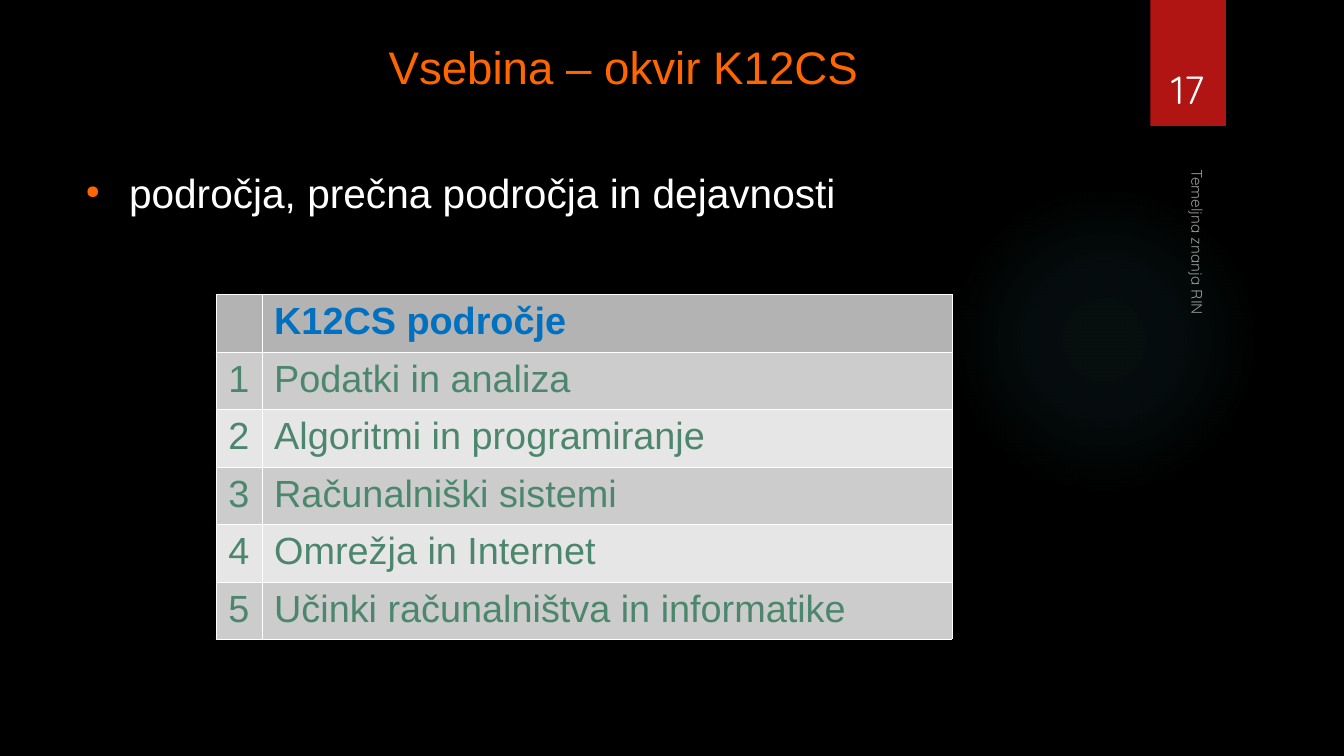
from pptx import Presentation
from pptx.dml.color import RGBColor
from pptx.enum.shapes import MSO_SHAPE
from pptx.enum.text import MSO_ANCHOR, PP_ALIGN
from pptx.oxml import parse_xml
from pptx.oxml.ns import nsdecls, qn
from pptx.util import Inches, Pt

LEFT, CENTER = PP_ALIGN.LEFT, PP_ALIGN.CENTER
TOP, MIDDLE, BOTTOM = MSO_ANCHOR.TOP, MSO_ANCHOR.MIDDLE, MSO_ANCHOR.BOTTOM
OVAL, RECTANGLE = MSO_SHAPE.OVAL, MSO_SHAPE.RECTANGLE

# Content
TITLE = "Vsebina – okvir K12CS"
BULLET = "področja, prečna področja in dejavnosti"
FOOTER = "Temeljna znanja RIN"
PAGE_NUMBER = "17"
TABLE_HEADER = "K12CS področje"
AREAS = [
    "Podatki in analiza",
    "Algoritmi in programiranje",
    "Računalniški sistemi",
    "Omrežja in Internet",
    "Učinki računalništva in informatike",
]

# Style
ORANGE, WHITE, RED, BLUE, GREEN = "FF6600", "FFFFFF", "B01513", "0070C0", "4B866D"
HEADER_FILL, BAND_FILLS = "B3B3B3", ["CCCCCC", "E6E6E6"]
GLOW_COLOR, GLOW_STOPS = "50B9C1", [(0, 7), (36, 6), (69, 0)]
COLUMN_WIDTHS, TABLE_HEIGHT = [0.46, 6.84], 3.39


def color(value):
    return RGBColor.from_string(value)


def write(frame, text, size, fill, font="Arial", align=LEFT, bold=False):
    para = frame.paragraphs[0]
    para.alignment = align
    span = para.add_run()
    span.text = text
    span.font.name, span.font.size, span.font.bold = font, Pt(size), bold
    span.font.color.rgb = color(fill)
    return para


def add_text(page, place, text, size, fill, anchor=TOP, inset=(0, 0), rotation=0, **style):
    box = page.shapes.add_textbox(*map(Inches, place))
    box.rotation = rotation
    frame = box.text_frame
    frame.word_wrap = True
    frame.vertical_anchor = anchor
    frame.margin_left = frame.margin_right = Inches(inset[0])
    frame.margin_top = frame.margin_bottom = Inches(inset[1])
    return write(frame, text, size, fill, **style)


def add_block(page, kind, place, fill):
    block = page.shapes.add_shape(kind, *map(Inches, place))
    block.shadow.inherit = False
    block.line.fill.background()
    block.fill.solid()
    block.fill.fore_color.rgb = color(fill)
    return block


def add_glow(page, place):
    glow = add_block(page, OVAL, place, GLOW_COLOR)
    stops = "".join(
        f'<a:gs pos="{position * 1000}"><a:srgbClr val="{GLOW_COLOR}">'
        f'<a:alpha val="{opacity * 1000}"/></a:srgbClr></a:gs>'
        for position, opacity in GLOW_STOPS)
    gradient = parse_xml(
        f'<a:gradFill {nsdecls("a")}><a:gsLst>{stops}</a:gsLst><a:path path="circle">'
        '<a:fillToRect l="50000" t="50000" r="50000" b="50000"/></a:path></a:gradFill>')
    properties = glow._element.spPr
    properties.replace(properties.find(qn("a:solidFill")), gradient)


def add_bullet(para, fill, percent, indent, hanging):
    properties = para._p.get_or_add_pPr()
    properties.set("marL", str(Inches(indent)))
    properties.set("indent", str(-Inches(hanging)))
    for item in (
        f'<a:buClr {nsdecls("a")}><a:srgbClr val="{fill}"/></a:buClr>',
        f'<a:buSzPct {nsdecls("a")} val="{percent * 1000}"/>',
        f'<a:buChar {nsdecls("a")} char="●"/>',
    ):
        properties.append(parse_xml(item))


def style_cell(cell, fill):
    properties = cell._tc.get_or_add_tcPr()
    for side in ("lnL", "lnR", "lnT", "lnB"):
        properties.append(parse_xml(
            f'<a:{side} {nsdecls("a")} w="{Pt(0.06)}"><a:solidFill>'
            f'<a:srgbClr val="{WHITE}"/></a:solidFill></a:{side}>'))
    cell.fill.solid()
    cell.fill.fore_color.rgb = color(fill)
    cell.margin_left = cell.margin_right = Inches(0.12)
    cell.margin_top = cell.margin_bottom = Inches(0.06)


def add_area_table(page, left, top):
    count = len(AREAS) + 1
    table = page.shapes.add_table(
        count, 2, Inches(left), Inches(top),
        Inches(sum(COLUMN_WIDTHS)), Inches(TABLE_HEIGHT)).table
    for column, width in zip(table.columns, COLUMN_WIDTHS):
        column.width = Inches(width)
    for index in range(count):
        fill = BAND_FILLS[(index - 1) % 2] if index else HEADER_FILL
        for cell in table.rows[index].cells:
            style_cell(cell, fill)
    write(table.cell(0, 1).text_frame, TABLE_HEADER, 27, BLUE, bold=True)
    for number, area in enumerate(AREAS, start=1):
        write(table.cell(number, 0).text_frame, str(number), 27, GREEN, align=CENTER)
        write(table.cell(number, 1).text_frame, area, 27, GREEN)


def main():
    deck = Presentation()
    deck.slide_width, deck.slide_height = Inches(13.33), Inches(7.5)
    page = deck.slides.add_slide(deck.slide_layouts[6])
    page.background.fill.solid()
    page.background.fill.fore_color.rgb = color("000000")

    # Backdrop
    add_glow(page, (9.41, 1.83, 3.08, 3.08))
    add_block(page, RECTANGLE, (11.41, 0, 0.75, 1.25), RED)

    # Title and bullet
    add_text(page, (0.71, 0.24, 10.95, 0.83), TITLE, 32.6, ORANGE,
             anchor=MIDDLE, align=CENTER)
    bullet = add_text(page, (0.71, 1.67, 11.9, 5.24), BULLET, 29, WHITE)
    add_bullet(bullet, ORANGE, percent=45, indent=0.57, hanging=0.43)

    add_area_table(page, 2.14, 2.92)

    # Page number and footer
    add_text(page, (11.32, 0.32, 0.92, 0.84), PAGE_NUMBER, 28, WHITE,
             anchor=BOTTOM, inset=(0.1, 0.05), font="Quicksand", align=CENTER)
    footer = add_text(page, (9.79, 3.53, 4.22, 0.33), FOOTER, 11, WHITE,
                      anchor=BOTTOM, inset=(0.1, 0.05), rotation=90, font="Quicksand")
    tint = footer._p.find(".//" + qn("a:srgbClr"))
    tint.append(parse_xml(f'<a:alpha {nsdecls("a")} val="60000"/>'))

    deck.save("out.pptx")


if __name__ == "__main__":
    main()
